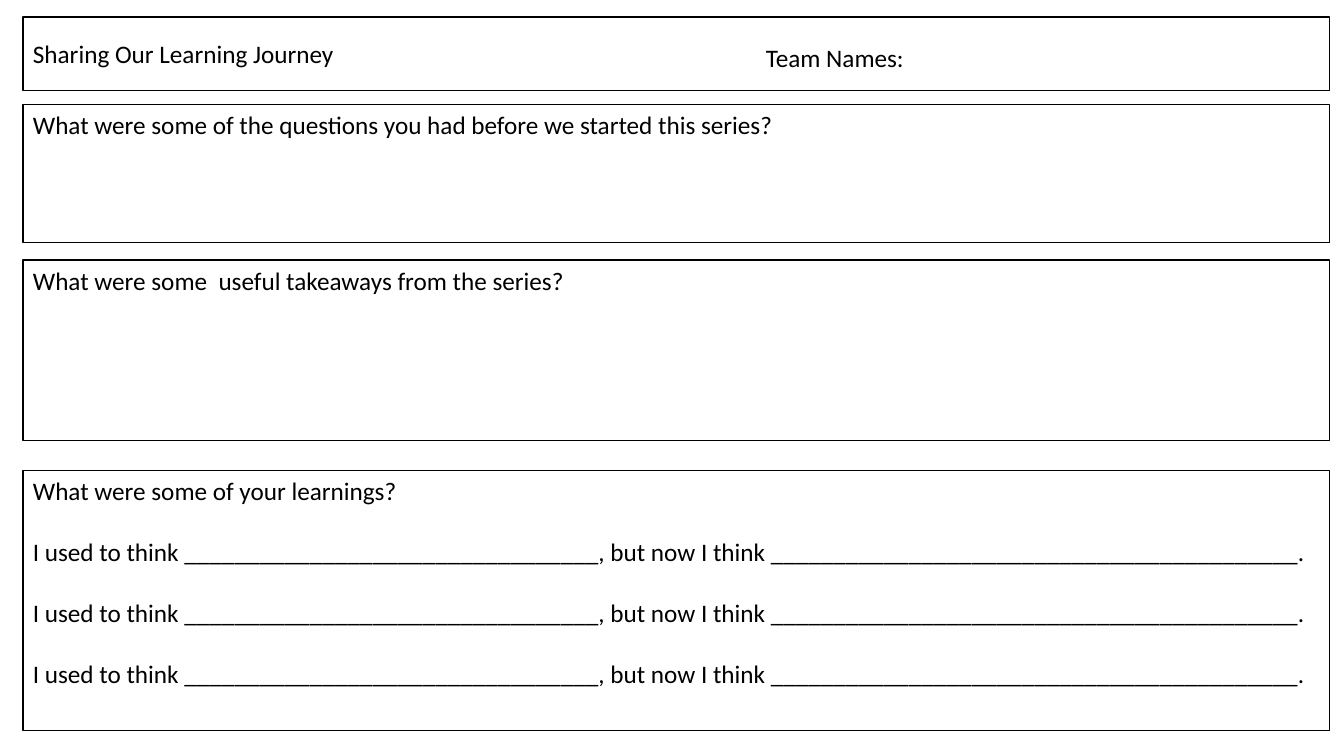
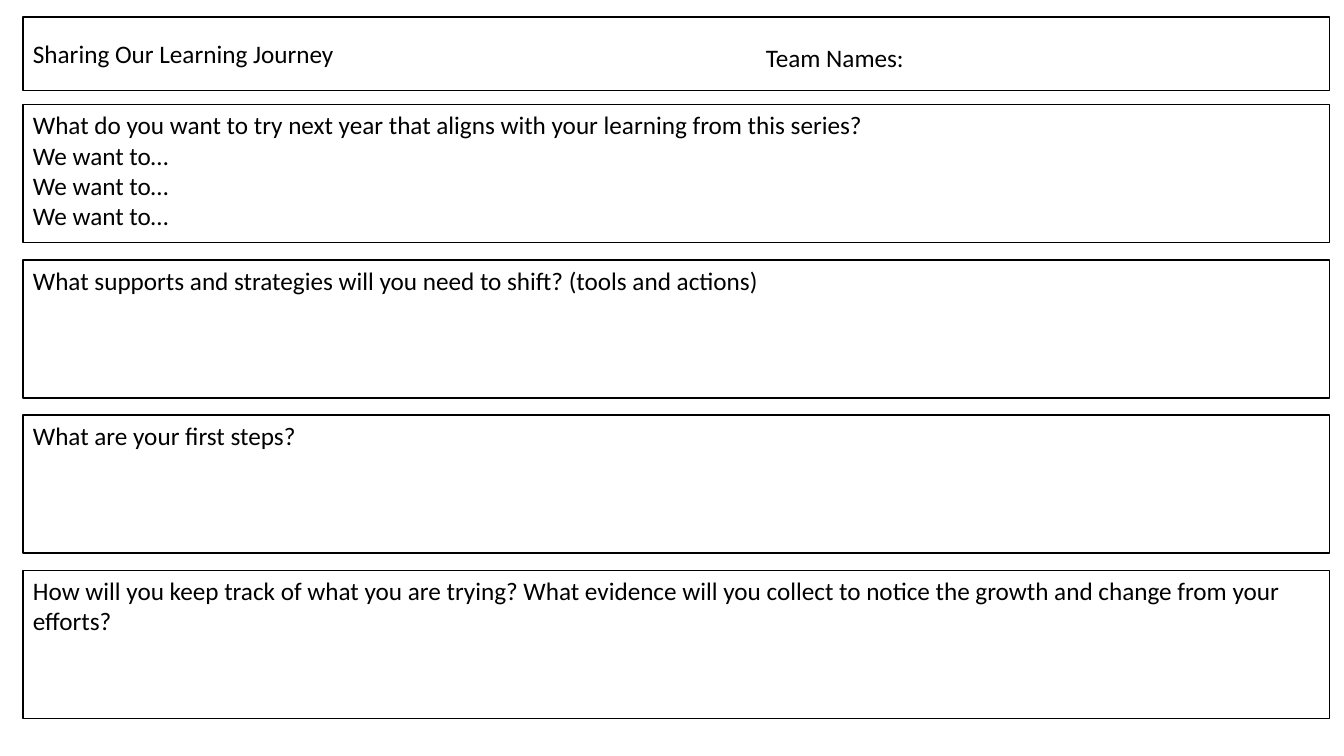
import pptx
import pptx.util
import pptx.dml.color
import pptx.enum.shapes
import pptx.enum.text

Cm = pptx.util.Cm
Pt = pptx.util.Pt
RGB = pptx.dml.color.RGBColor
Anchor = pptx.enum.text.MSO_ANCHOR
Align = pptx.enum.text.PP_ALIGN
Fit = pptx.enum.text.MSO_AUTO_SIZE

COLORS = {"ink": "000000"}
FONT = "Calibri"
LEFT, WIDTH = 0.58, 32.92
TOP, PITCH, HIGH = 2.64, 3.91, 3.48


def write(shape, lines, size=18, color="ink", anchor=Anchor.TOP, gap=0, wrap=True):
    frame = shape.text_frame
    frame.word_wrap = wrap
    frame.vertical_anchor = anchor
    for index, line in enumerate(lines):
        para = frame.paragraphs[0] if index == 0 else frame.add_paragraph()
        para.alignment = Align.LEFT
        para.space_before = Pt(gap if index else 0)
        run = para.add_run()
        run.text = line
        run.font.name = FONT
        run.font.size = Pt(size)
        run.font.color.rgb = RGB.from_string(COLORS[color])


def panel(slide, top, high, lines, **style):
    box = slide.shapes.add_shape(
        pptx.enum.shapes.MSO_SHAPE.RECTANGLE, Cm(LEFT), Cm(top), Cm(WIDTH), Cm(high))
    box.shadow.inherit = False
    box.fill.background()
    box.line.color.rgb = RGB.from_string(COLORS["ink"])
    box.line.width = Pt(1)
    write(box, lines, **style)


think = "I used to think " + "_" * 33 + ", but now I think " + "_" * 42 + "."

pages = [
    [
        (TOP, HIGH, ["What were some of the questions you had before we started this series?"], 0),
        (TOP + PITCH, 4.55, ["What were some  useful takeaways from the series?"], 0),
        (11.86, 6.55, ["What were some of your learnings?"] + [think] * 3, 22),
    ],
    [
        (TOP, HIGH, ["What do you want to try next year that aligns with your learning from this series?"]
         + ["We want to…"] * 3, 0),
        (TOP + PITCH, HIGH, ["What supports and strategies will you need to shift? (tools and actions)"], 0),
        (TOP + 2 * PITCH, HIGH, ["What are your first steps?"], 0),
        (TOP + 3 * PITCH, 3.73, ["How will you keep track of what you are trying? What evidence will you "
                                 "collect to notice the growth and change from your efforts?"], 0),
    ],
]

deck = pptx.Presentation()
deck.slide_width = Cm(33.87)
deck.slide_height = Cm(19.05)

for page in pages:
    slide = deck.slides.add_slide(deck.slide_layouts[6])
    panel(slide, 0.43, 1.85, ["Sharing Our Learning Journey"], anchor=Anchor.MIDDLE)
    team = slide.shapes.add_textbox(Cm(19.05), Cm(0.94), Cm(4.04), Cm(1.02))
    write(team, ["Team Names:"], wrap=False)
    team.text_frame.auto_size = Fit.SHAPE_TO_FIT_TEXT
    for top, high, lines, gap in page:
        panel(slide, top, high, lines, gap=gap)

deck.save("out.pptx")
